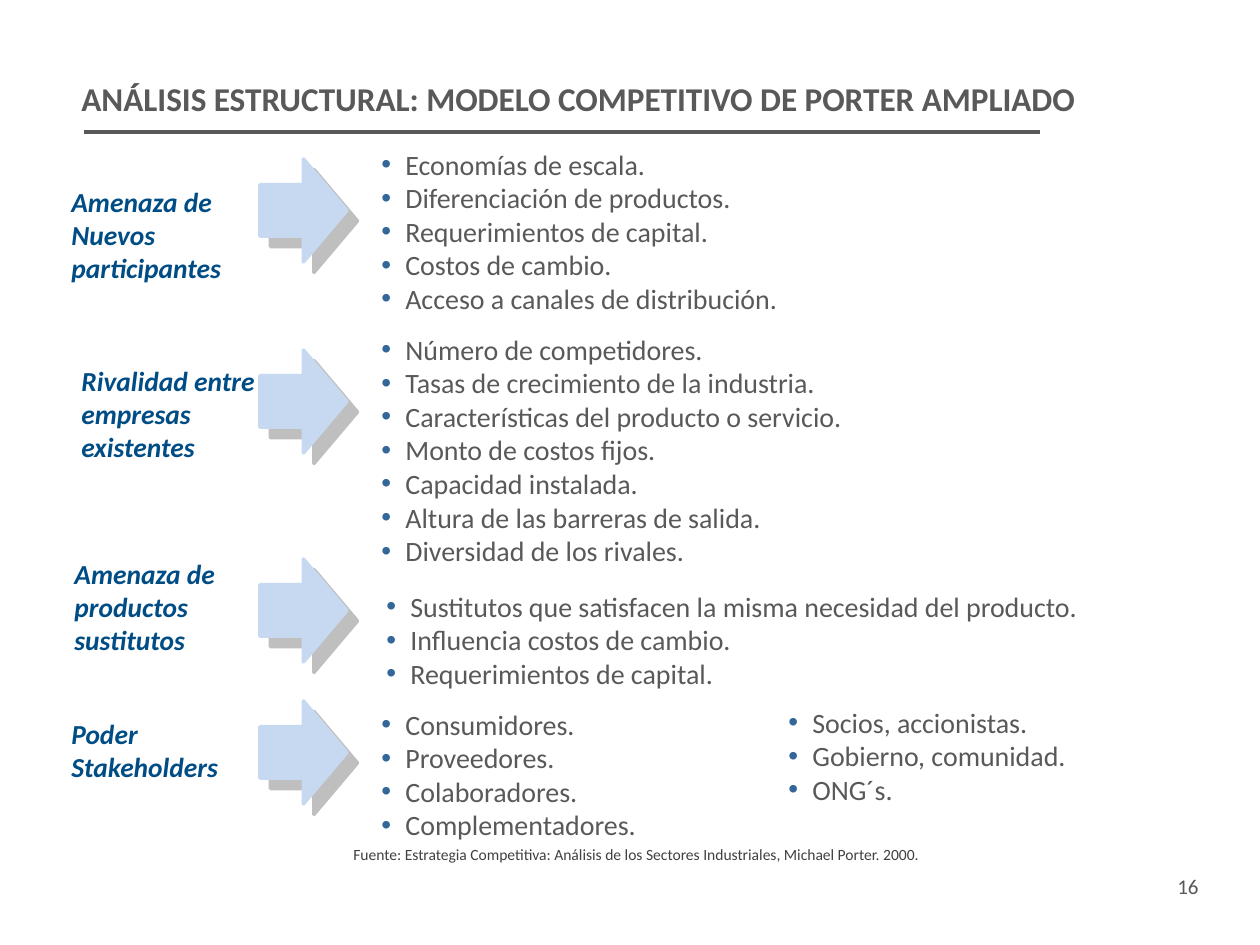
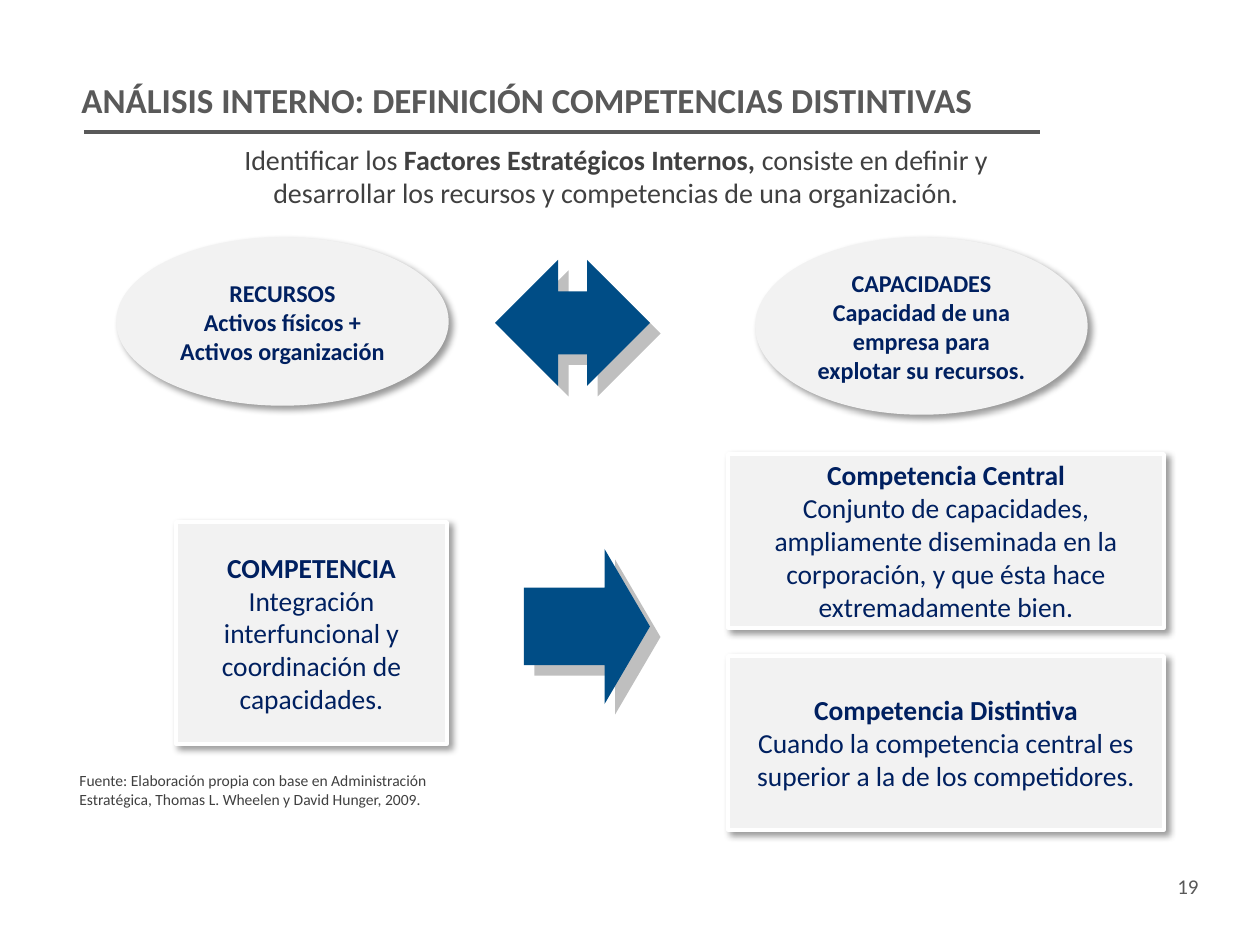
from collections.abc import Sequence
from dataclasses import dataclass
from typing import NamedTuple

from lxml.etree import SubElement
from pptx import Presentation
from pptx.dml.color import RGBColor
from pptx.enum.shapes import MSO_CONNECTOR, MSO_SHAPE
from pptx.enum.text import MSO_ANCHOR, PP_ALIGN
from pptx.oxml.ns import qn
from pptx.util import Emu, Pt

PX_PER_INCH = 126


def px(length: int) -> Emu:
    return Emu(round(length * 914400 / PX_PER_INCH))


class Box(NamedTuple):
    left: int
    top: int
    width: int
    height: int

    def emu(self) -> list[Emu]:
        return [px(length) for length in self]


class Span(NamedTuple):
    text: str
    bold: bool = False


class TextStyle(NamedTuple):
    size: float
    color: str
    bold: bool = False
    italic: bool = False
    align: PP_ALIGN = PP_ALIGN.LEFT


class Shadow(NamedTuple):
    color: str
    opacity: int
    blur: float
    distance: float


# Theme: every colour and type size
@dataclass(frozen=True)
class Theme:
    font: str = "Calibri"
    rule: str = "595959"
    bullet: str = "336699"
    pale_arrow: str = "C6D9F1"
    dark_arrow: str = "004D86"
    panel: str = "F2F2F2"
    panel_edge: str = "FFFFFF"
    line_width: int = 2
    title: TextStyle = TextStyle(20, "595959", bold=True)
    long_title: TextStyle = TextStyle(19, "595959", bold=True)
    number: TextStyle = TextStyle(12, "595959", align=PP_ALIGN.RIGHT)
    item: TextStyle = TextStyle(16, "595959", align=PP_ALIGN.JUSTIFY)
    force: TextStyle = TextStyle(15.7, "004D86", bold=True, italic=True)
    intro: TextStyle = TextStyle(16, "404040", align=PP_ALIGN.CENTER)
    source: TextStyle = TextStyle(8.9, "404040")
    centered_source: TextStyle = TextStyle(8.9, "404040", align=PP_ALIGN.CENTER)
    ellipse: TextStyle = TextStyle(13.8, "002060", bold=True, align=PP_ALIGN.CENTER)
    card: TextStyle = TextStyle(15.7, "002060", align=PP_ALIGN.CENTER)
    arrow_shadow: Shadow = Shadow("808080", 50, 0, 8.5)
    panel_shadow: Shadow = Shadow("000000", 40, 4, 3)


THEME = Theme()
BULLET_INDENT = px(24)
Paragraphs = Sequence[Sequence[Span]]


@dataclass(frozen=True)
class Force:
    label: str
    label_box: Box
    arrow_top: int
    lists: tuple[tuple[Box, tuple[str, ...]], ...]


@dataclass(frozen=True)
class Panel:
    kind: MSO_SHAPE
    box: Box
    edge: str
    style: TextStyle
    paragraphs: Paragraphs


# Text
def lines(*texts: str) -> Paragraphs:
    return [[Span(text)] for text in texts]


def add_bullet(para) -> None:
    properties = para._p.get_or_add_pPr()
    properties.set("marL", str(BULLET_INDENT))
    properties.set("indent", str(-BULLET_INDENT))
    color = SubElement(properties, qn("a:buClr"))
    SubElement(color, qn("a:srgbClr"), val=THEME.bullet)
    SubElement(properties, qn("a:buFont"), typeface="Arial")
    SubElement(properties, qn("a:buChar"), char="•")


def write(frame, style: TextStyle, paragraphs: Paragraphs, bulleted: bool = False) -> None:
    frame.word_wrap = True
    for index, spans in enumerate(paragraphs):
        para = frame.add_paragraph() if index else frame.paragraphs[0]
        para.alignment = style.align
        if bulleted:
            add_bullet(para)
        font = para.font
        font.name, font.size = THEME.font, Pt(style.size)
        font.color.rgb = RGBColor.from_string(style.color)
        font.bold, font.italic = style.bold, style.italic
        for part in spans:
            span = para.add_run()
            span.text = part.text
            if part.bold:
                span.font.bold = True


def add_text(page, box: Box, style: TextStyle, paragraphs: Paragraphs,
             bulleted: bool = False) -> None:
    write(page.shapes.add_textbox(*box.emu()).text_frame, style, paragraphs, bulleted)


# Shapes
def add_shape(page, kind: MSO_SHAPE, box: Box, fill: str, shadow: Shadow,
              edge: str | None = None):
    shape = page.shapes.add_shape(kind, *box.emu())
    shape.fill.solid()
    shape.fill.fore_color.rgb = RGBColor.from_string(fill)
    if edge:
        shape.line.color.rgb = RGBColor.from_string(edge)
        shape.line.width = Pt(THEME.line_width)
    else:
        shape.line.fill.background()
    shape.shadow.inherit = False
    effects = shape._element.spPr.find(qn("a:effectLst"))
    outer = SubElement(effects, qn("a:outerShdw"), blurRad=str(Pt(shadow.blur)),
                       dist=str(Pt(shadow.distance)), dir="2700000",
                       algn="tl", rotWithShape="0")
    color = SubElement(outer, qn("a:srgbClr"), val=shadow.color)
    SubElement(color, qn("a:alpha"), val=str(shadow.opacity * 1000))
    return shape


def add_panel(page, panel: Panel) -> None:
    shape = add_shape(page, panel.kind, panel.box, THEME.panel, THEME.panel_shadow, panel.edge)
    shape.text_frame.vertical_anchor = MSO_ANCHOR.MIDDLE
    write(shape.text_frame, panel.style, panel.paragraphs)


def add_force(page, force: Force) -> None:
    for box, items in force.lists:
        add_text(page, box, THEME.item, lines(*items), bulleted=True)
    add_text(page, force.label_box, THEME.force, lines(force.label))
    add_shape(page, MSO_SHAPE.RIGHT_ARROW, Box(260, force.arrow_top, 87, 103),
              THEME.pale_arrow, THEME.arrow_shadow, THEME.pale_arrow)


# Title, rule and page number shared by the slides
def add_page(deck, title: str, style: TextStyle, number: int):
    page = deck.slides.add_slide(deck.slide_layouts[6])
    rule = page.shapes.add_connector(MSO_CONNECTOR.STRAIGHT, px(84), px(132), px(1040), px(132))
    rule.line.color.rgb = RGBColor.from_string(THEME.rule)
    rule.line.width = Pt(THEME.line_width)
    SubElement(rule._element.spPr, qn("a:effectLst"))
    add_text(page, Box(1152, 867, 59, 50), THEME.number, lines(str(number)))
    add_text(page, Box(69, 72, 1105, 81), style, lines(title))
    return page


FORCES = (
    Force("Amenaza de Nuevos participantes", Box(59, 179, 214, 113), 159, (
        (Box(369, 141, 730, 183), (
            "Economías de escala.", "Diferenciación de productos.",
            "Requerimientos de capital.", "Costos de cambio.",
            "Acceso a canales de distribución.")),)),
    Force("Rivalidad entre empresas existentes", Box(69, 358, 214, 112), 350, (
        (Box(369, 326, 697, 251), (
            "Número de competidores.", "Tasas de crecimiento de la industria.",
            "Características del producto o servicio.", "Monto de costos fijos.",
            "Capacidad instalada.", "Altura de las barreras de salida.",
            "Diversidad de los rivales.")),)),
    Force("Amenaza de productos sustitutos", Box(62, 551, 204, 112), 559, (
        (Box(374, 583, 911, 115), (
            "Sustitutos que satisfacen la misma necesidad del producto.",
            "Influencia costos de cambio.", "Requerimientos de capital.")),)),
    Force("Poder Stakeholders", Box(59, 711, 214, 79), 701, (
        (Box(369, 701, 397, 149), (
            "Consumidores.", "Proveedores.", "Colaboradores.", "Complementadores.")),
        (Box(776, 699, 397, 118), (
            "Socios, accionistas.", "Gobierno, comunidad.", "ONG´s.")))),
)

PANELS = (
    Panel(MSO_SHAPE.OVAL, Box(118, 239, 329, 165), THEME.panel, THEME.ellipse,
          lines("RECURSOS", "Activos físicos + Activos organización")),
    Panel(MSO_SHAPE.OVAL, Box(757, 239, 329, 174), THEME.panel, THEME.ellipse,
          lines("CAPACIDADES", "Capacidad de una empresa para explotar su recursos.")),
    Panel(MSO_SHAPE.RECTANGLE, Box(176, 522, 271, 222), THEME.panel_edge, THEME.card,
          [[Span("COMPETENCIA", True),
            Span(" Integración interfuncional y coordinación de capacidades.")]]),
    Panel(MSO_SHAPE.RECTANGLE, Box(728, 454, 436, 174), THEME.panel_edge, THEME.card,
          [[Span("Competencia Central", True)],
           [Span("Conjunto de capacidades, ampliamente diseminada en la corporación, "
                 "y que ésta hace extremadamente bien.")]]),
    Panel(MSO_SHAPE.RECTANGLE, Box(728, 656, 436, 174), THEME.panel_edge, THEME.card,
          [[Span("Competencia Distintiva", True)],
           [Span("Cuando la competencia central es superior a la de los competidores.")]]),
)


def build_porter_page(deck) -> None:
    page = add_page(deck, "ANÁLISIS ESTRUCTURAL: MODELO COMPETITIVO DE PORTER AMPLIADO",
                    THEME.long_title, 16)
    for force in FORCES:
        add_force(page, force)
    add_text(page, Box(243, 839, 786, 32), THEME.centered_source, lines(
        "Fuente: Estrategia Competitiva: Análisis de los Sectores Industriales, "
        "Michael Porter. 2000."))


def build_competence_page(deck) -> None:
    page = add_page(deck, "ANÁLISIS INTERNO: DEFINICIÓN COMPETENCIAS DISTINTIVAS",
                    THEME.title, 19)
    add_text(page, Box(200, 136, 832, 81), THEME.intro, [[
        Span("Identificar los "), Span("Factores Estratégicos Internos, ", True),
        Span("consiste en definir y desarrollar los recursos y competencias "
             "de una organización.")]])
    for panel in PANELS:
        add_panel(page, panel)
    # Arrows between the panels
    add_shape(page, MSO_SHAPE.LEFT_RIGHT_ARROW, Box(495, 260, 155, 126),
              THEME.dark_arrow, THEME.arrow_shadow)
    arrow = add_shape(page, MSO_SHAPE.RIGHT_ARROW, Box(524, 549, 126, 155),
                      THEME.dark_arrow, THEME.arrow_shadow)
    arrow.adjustments[1] = 0.36
    add_text(page, Box(67, 765, 407, 50), THEME.source, lines(
        "Fuente: Elaboración propia con base en Administración Estratégica, "
        "Thomas L. Wheelen y David Hunger, 2009."))


def main() -> None:
    deck = Presentation()
    deck.slide_width, deck.slide_height = px(1260), px(945)
    build_porter_page(deck)
    build_competence_page(deck)
    deck.save("out.pptx")


if __name__ == "__main__":
    main()
